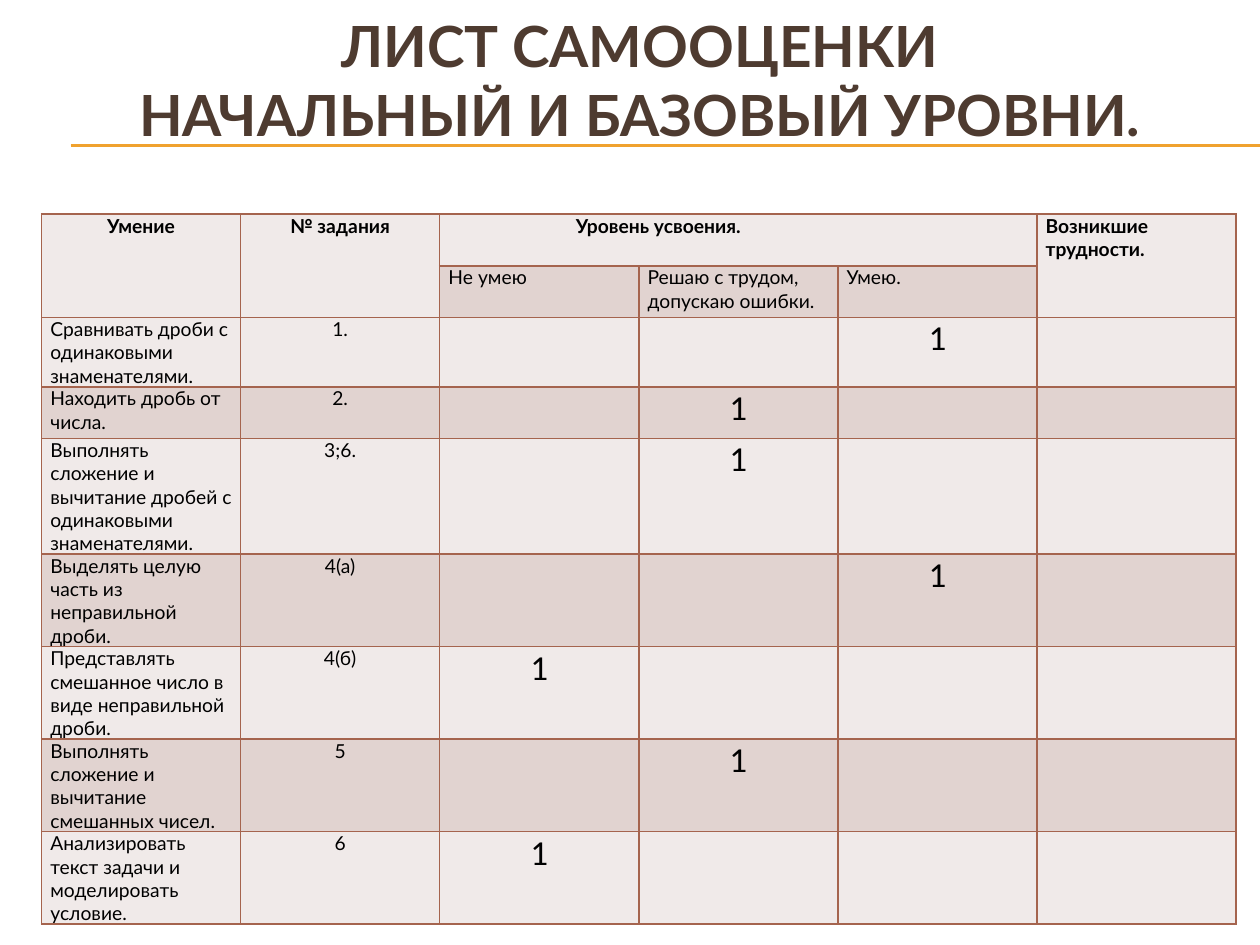
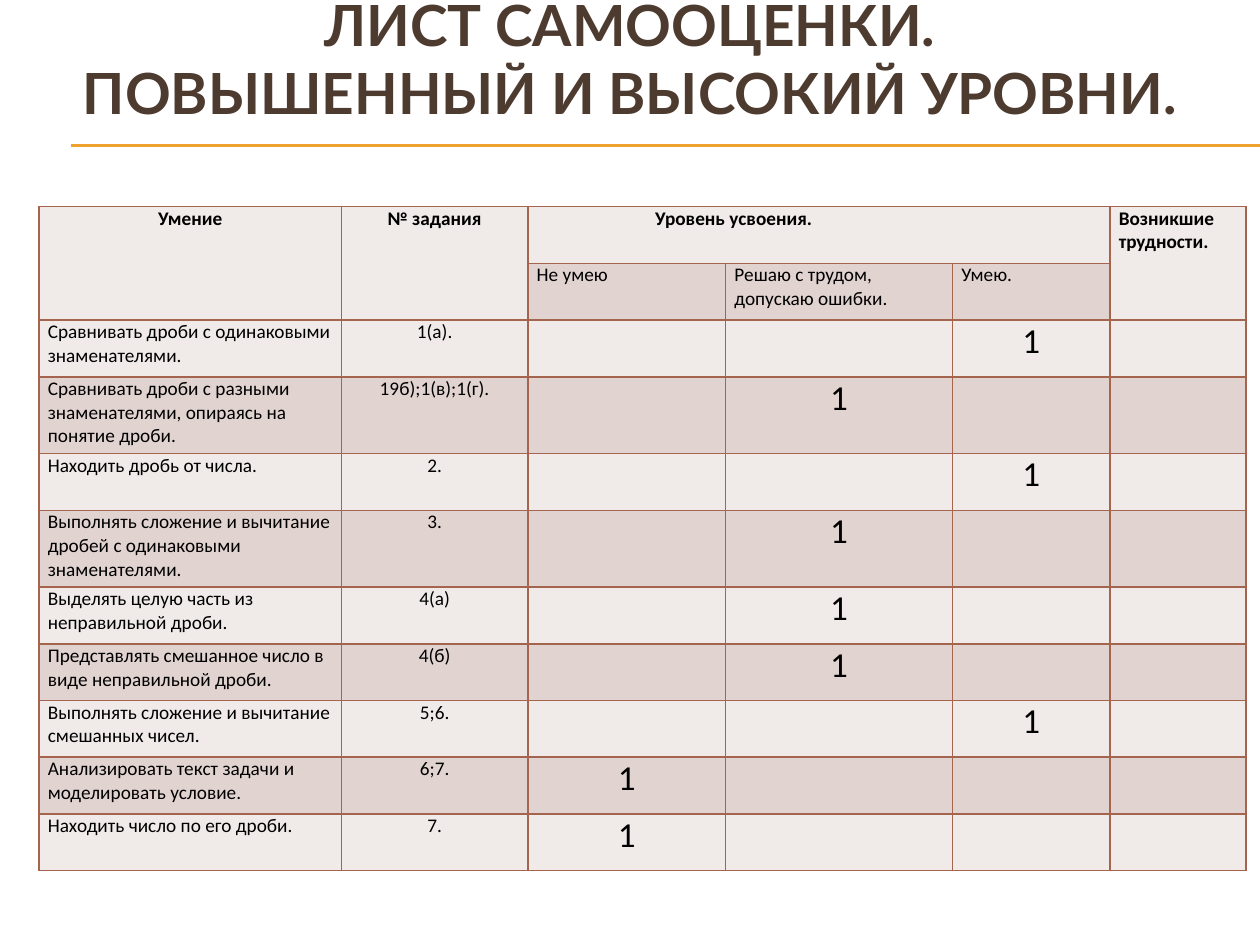
import pptx
import pptx.dml.color
import pptx.enum.shapes
import pptx.enum.text
import pptx.oxml.ns
import pptx.util
from lxml import etree

Inches = pptx.util.Inches
Pt = pptx.util.Pt
RGBColor = pptx.dml.color.RGBColor
Align = pptx.enum.text.PP_ALIGN

BROWN = RGBColor(0x4E, 0x3B, 0x30)
GOLD = RGBColor(0xF0, 0xA2, 0x2E)
RUST = RGBColor(0xA5, 0x64, 0x4E)
BLACK = RGBColor(0, 0, 0)
BANDS = RGBColor(0xF0, 0xEA, 0xE9), RGBColor(0xE1, 0xD3, 0xD0)

HEADINGS = {0: "Умение", 1: "№ задания", 2: "Уровень усвоения.", 5: "Возникшие трудности."}
LEVELS = ["Не умею", "Решаю с трудом, допускаю ошибки.", "Умею."]
MERGES = [((0, 0), (1, 0)), ((0, 1), (1, 1)), ((0, 2), (0, 4)), ((0, 5), (1, 5))]
CANNOT, WITH_EFFORT, CAN = 2, 3, 4

COMPARE = "Сравнивать дроби с одинаковыми знаменателями."
COMPARE_DIFFERENT = "Сравнивать дроби с разными знаменателями, опираясь на понятие дроби."
PART_OF_NUMBER = "Находить дробь от числа."
ADD_FRACTIONS = "Выполнять сложение и вычитание дробей с одинаковыми знаменателями."
WHOLE_PART = "Выделять целую часть из неправильной дроби."
MIXED_NUMBER = "Представлять смешанное число в виде неправильной дроби."
ADD_MIXED = "Выполнять сложение и вычитание смешанных чисел."
ANALYSE = "Анализировать текст задачи и моделировать условие."
NUMBER_BY_PART = "Находить число по его дроби."

BASIC_SKILLS = [
    (COMPARE, "1.", CAN),
    (PART_OF_NUMBER, "2.", WITH_EFFORT),
    (ADD_FRACTIONS, "3;6.", WITH_EFFORT),
    (WHOLE_PART, "4(а)", CAN),
    (MIXED_NUMBER, "4(б)", CANNOT),
    (ADD_MIXED, "5", WITH_EFFORT),
    (ANALYSE, "6", CANNOT),
]
ADVANCED_SKILLS = [
    (COMPARE, "1(а).", CAN),
    (COMPARE_DIFFERENT, "19б);1(в);1(г).", WITH_EFFORT),
    (PART_OF_NUMBER, "2.", CAN),
    (ADD_FRACTIONS, "3.", WITH_EFFORT),
    (WHOLE_PART, "4(а)", WITH_EFFORT),
    (MIXED_NUMBER, "4(б)", WITH_EFFORT),
    (ADD_MIXED, "5;6.", CAN),
    (ANALYSE, "6;7.", CANNOT),
    (NUMBER_BY_PART, "7.", CANNOT),
]


class SelfAssessmentDeck:
    """Hold the shared style and the current slide."""

    def __init__(self):
        self.presentation = pptx.Presentation()
        self.presentation.slide_width = Inches(10)
        self.presentation.slide_height = Inches(7.5)
        self.slide = None

    def add_slide(self):
        self.slide = self.presentation.slides.add_slide(self.presentation.slide_layouts[6])
        for y in (1.15, 1.16):
            self.add_rule(y)

    def add_rule(self, y):
        rule = self.slide.shapes.add_connector(
            pptx.enum.shapes.MSO_CONNECTOR.STRAIGHT, Inches(0.56), Inches(y), Inches(10), Inches(y))
        rule.line.color.rgb = GOLD
        rule.line.width = Pt(0.75)
        etree.SubElement(rule.element.spPr, pptx.oxml.ns.qn("a:effectLst"))

    def fill_paragraph(self, paragraph, text, alignment, color=BLACK, **font_format):
        paragraph.text = text
        paragraph.alignment = alignment
        for run in paragraph.runs:
            run.font.color.rgb = color
            for name, value in font_format.items():
                setattr(run.font, name, value)

    def add_title(self, text, box, bottom_inset=0.05):
        frame = self.slide.shapes.add_textbox(*map(Inches, box)).text_frame
        frame_format = {
            "word_wrap": True,
            "vertical_anchor": pptx.enum.text.MSO_ANCHOR.MIDDLE,
            "margin_bottom": Inches(bottom_inset),
        }
        for name, value in frame_format.items():
            setattr(frame, name, value)
        self.fill_paragraph(frame.paragraphs[0], text, Align.CENTER, BROWN,
                            name="Lato", size=Pt(32.4), bold=True)

    def style_cell(self, cell, fill):
        margins = {"margin_left": 0.07, "margin_right": 0.07, "margin_top": 0, "margin_bottom": 0}
        for name, value in margins.items():
            setattr(cell, name, Inches(value))
        properties = cell._tc.get_or_add_tcPr()
        for edge in ("a:lnL", "a:lnR", "a:lnT", "a:lnB"):
            line = etree.SubElement(properties, pptx.oxml.ns.qn(edge), w=str(Pt(1)))
            solid = etree.SubElement(line, pptx.oxml.ns.qn("a:solidFill"))
            etree.SubElement(solid, pptx.oxml.ns.qn("a:srgbClr"), val=str(RUST))
        cell.fill.solid()
        cell.fill.fore_color.rgb = fill

    def add_skill_table(self, skills, box, widths, heights, font, level_indent):
        table = self.slide.shapes.add_table(len(heights), len(widths), *map(Inches, box)).table
        for column, width in zip(table.columns, widths):
            column.width = Inches(width)
        for index, height in enumerate(heights):
            table.rows[index].height = Inches(height)
            for cell in table.rows[index].cells:
                self.style_cell(cell, BANDS[index % 2])
        for first, last in MERGES:
            table.cell(*first).merge(table.cell(*last))

        def put(row, column, text, centered=False, name=font, size=11, bold=False):
            self.fill_paragraph(table.cell(row, column).text_frame.paragraphs[0], text,
                                Align.CENTER if centered else Align.LEFT,
                                name=name, size=Pt(size), bold=bold)

        for column, text in HEADINGS.items():
            put(0, column, text, centered=column < 2, bold=True)
        table.cell(0, 2).margin_left = Inches(level_indent)
        for column, text in enumerate(LEVELS, 2):
            put(1, column, text)
        for row, (skill, task, level) in enumerate(skills, 2):
            put(row, 0, skill)
            put(row, 1, task, centered=True)
            put(row, level, "1", centered=True, name="Calibri", size=20)


def main():
    deck = SelfAssessmentDeck()

    deck.add_slide()
    deck.add_title("ЛИСТ САМООЦЕНКИ\nНАЧАЛЬНЫЙ И БАЗОВЫЙ УРОВНИ.",
                   (0.33, 0.16, 9.5, 1.48), bottom_inset=0.59)
    deck.add_skill_table(BASIC_SKILLS, (0.33, 1.7, 9.5, 5.07), [1.58] * 6, [0.41] * 9,
                         "Lato", level_indent=1.08)

    deck.add_slide()
    deck.add_title("ЛИСТ САМООЦЕНКИ.\nПОВЫШЕННЫЙ И ВЫСОКИЙ УРОВНИ.", (0, 0, 10, 0.92))
    deck.add_skill_table(ADVANCED_SKILLS, (0.31, 1.64, 9.59, 5.3),
                         [2.4, 1.48, 1.57, 1.8, 1.25, 1.08],
                         [0.45] * 3 + [0.61, 0.45, 0.61] + [0.45] * 5,
                         "Calibri", level_indent=1.01)

    deck.presentation.save("out.pptx")


if __name__ == "__main__":
    main()
